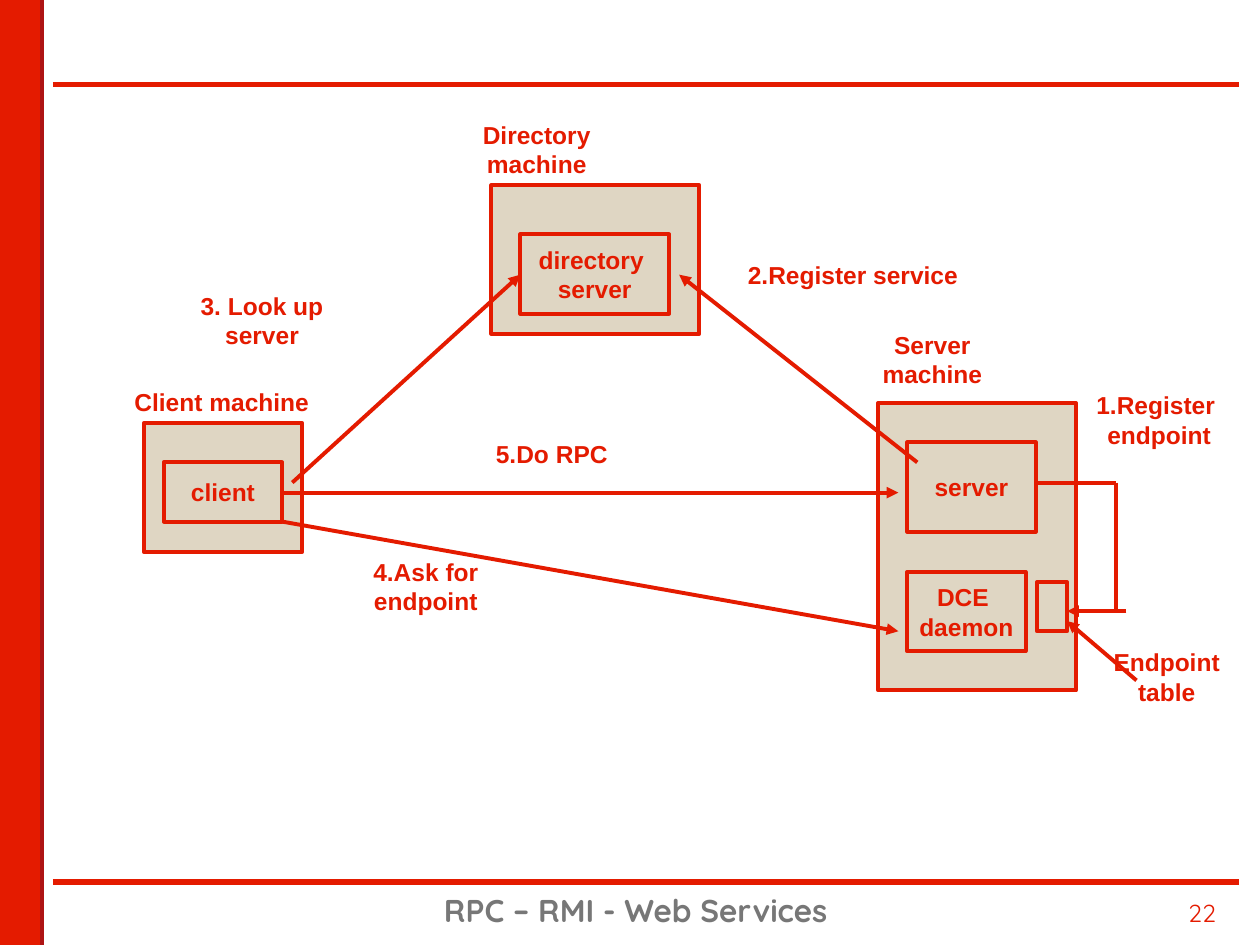
from lxml import etree
from pptx import Presentation
from pptx.dml.color import RGBColor
from pptx.enum.shapes import MSO_CONNECTOR, MSO_SHAPE
from pptx.enum.text import MSO_ANCHOR, PP_ALIGN
from pptx.oxml.ns import qn
from pptx.util import Inches, Pt

STRAIGHT = MSO_CONNECTOR.STRAIGHT
RECTANGLE = MSO_SHAPE.RECTANGLE
CENTER = PP_ALIGN.CENTER
MIDDLE = MSO_ANCHOR.MIDDLE
BOTTOM = MSO_ANCHOR.BOTTOM

COLORS = {"red": "E41B00", "dark red": "AE1414", "sand": "DFD6C3", "gray": "777777"}
COLORS = {name: RGBColor.from_string(value) for name, value in COLORS.items()}


def write(frame, lines, anchor, wrap=True, font="Arial", size=14, color="red", bold=True):
    frame.word_wrap = wrap
    frame.vertical_anchor = anchor
    for i, line in enumerate(lines):
        paragraph = frame.paragraphs[0] if i == 0 else frame.add_paragraph()
        paragraph.alignment = CENTER
        run = paragraph.add_run()
        run.text = line
        run.font.name = font
        run.font.size = Pt(size)
        run.font.bold = bold
        run.font.color.rgb = COLORS[color]


def connect(start, end, color="red", width=2.25, arrow=False):
    line = slide.shapes.add_connector(STRAIGHT, *map(Inches, start + end))
    line.line.color.rgb = COLORS[color]
    line.line.width = Pt(width)
    if arrow:
        etree.SubElement(line.line._get_or_add_ln(), qn("a:tailEnd"), type="triangle")
    etree.SubElement(line._element.spPr, qn("a:effectLst"))


prs = Presentation()
prs.slide_width = Inches(10)
prs.slide_height = Inches(7.5)
slide = prs.slides.add_slide(prs.slide_layouts[6])

for rule_y in (0.67, 7):
    connect((0.42, rule_y), (9.83, rule_y), width=3)

boxes = [
    ((0, 0, 0.33, 7.5), "red", []),
    ((3.9, 1.47, 1.65, 1.18), "sand", []),
    ((1.14, 3.36, 1.26, 1.02), "sand", []),
    ((6.97, 3.2, 1.57, 2.28), "sand", []),
    ((4.13, 1.86, 1.18, 0.63), "sand", ["directory ", "server"]),
    ((1.3, 3.67, 0.94, 0.47), "sand", ["client"]),
    ((7.2, 3.51, 1.02, 0.71), "sand", ["server"]),
    ((8.23, 4.62, 0.24, 0.39), "sand", []),
    ((7.2, 4.54, 0.94, 0.63), "sand", ["DCE ", "daemon"]),
]
for bounds, fill, lines in boxes:
    box = slide.shapes.add_shape(RECTANGLE, *map(Inches, bounds))
    box.shadow.inherit = False
    box.fill.solid()
    box.fill.fore_color.rgb = COLORS[fill]
    box.line.color.rgb = COLORS["red"]
    box.line.width = Pt(2.25)
    write(box.text_frame, lines, MIDDLE, wrap=False)

connect((0.33, 0), (0.33, 7.5), color="dark red")

calls = [
    ((2.32, 3.83), (4.13, 2.18), True),
    ((2.24, 3.91), (7.13, 3.91), True),
    ((2.24, 4.14), (7.13, 5.01), True),
    ((7.28, 3.67), (5.39, 2.18), True),
    ((8.23, 3.83), (8.86, 3.83), False),
    ((8.86, 3.83), (8.86, 4.85), False),
    ((8.94, 4.85), (8.47, 4.85), True),
    ((9.02, 5.4), (8.47, 4.93), True),
]
for start, end, arrow in calls:
    connect(start, end, arrow=arrow)

labels = [
    (1.76, 3.19, 2.35, 0.33, ["Client machine"]),
    (7.4, 2.85, 1.3, 0.57, ["Server machine"]),
    (4.26, 1.18, 1.3, 0.57, ["Directory machine"]),
    (2.08, 2.54, 1.3, 0.57, ["3. Look up server"]),
    (9.26, 5.37, 1.3, 0.57, ["Endpoint table"]),
    (9.2, 3.33, 1.3, 0.57, ["1.Register ", "endpoint"]),
    (6.77, 2.18, 1.97, 0.33, ["2.Register service"]),
    (3.38, 4.65, 1.3, 0.57, ["4.Ask for endpoint"]),
    (4.38, 3.6, 1.3, 0.33, ["5.Do RPC"]),
]
for center_x, center_y, width, height, lines in labels:
    label = slide.shapes.add_textbox(
        Inches(center_x - width / 2), Inches(center_y - height / 2), Inches(width), Inches(height)
    )
    write(label.text_frame, lines, BOTTOM)

footers = [
    ((2.67, 7, 4.75, 0.42), "RPC – RMI - Web Services", 18, "gray", True),
    ((9.25, 7.08, 0.58, 0.33), "22", 14, "red", False),
]
for bounds, text, size, color, bold in footers:
    footer = slide.shapes.add_textbox(*map(Inches, bounds))
    write(footer.text_frame, [text], BOTTOM, font="Quicksand", size=size, color=color, bold=bold)

prs.save("out.pptx")
